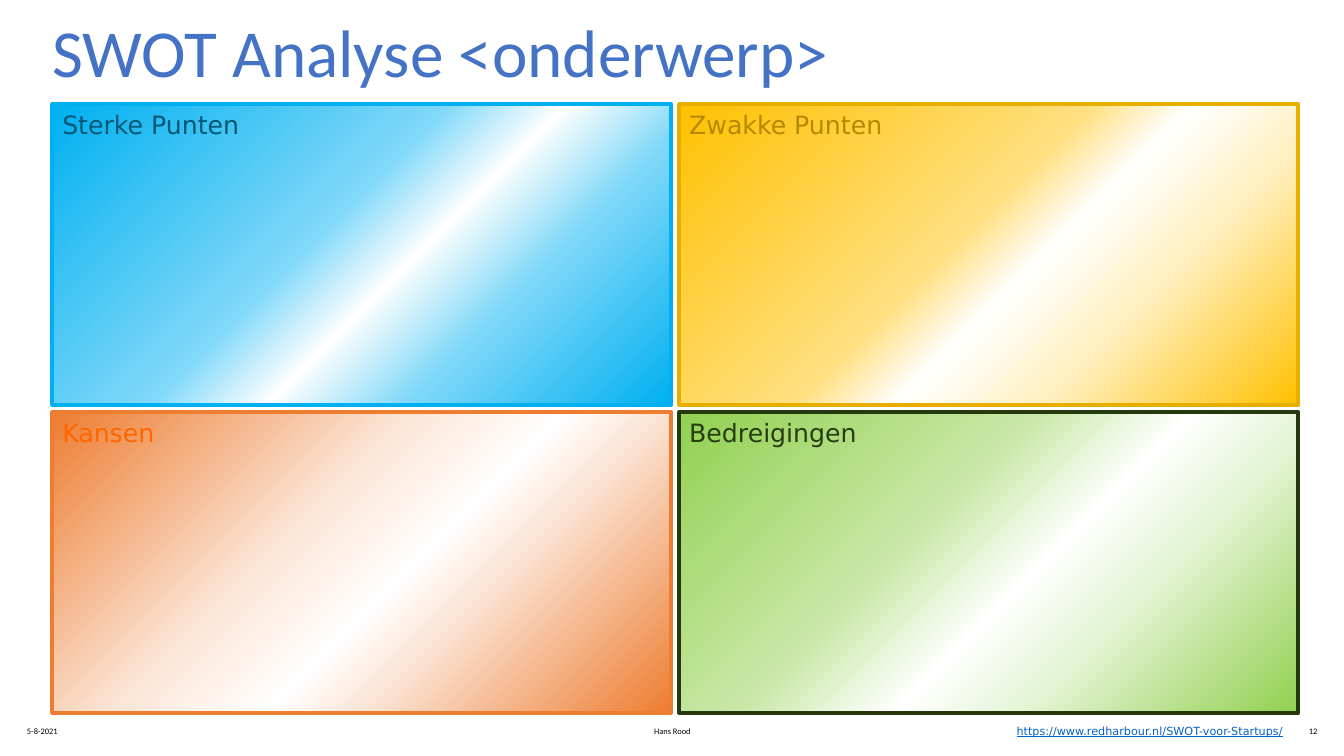
"""Build a SWOT analysis slide with four gradient quadrants."""
from dataclasses import dataclass

from lxml.etree import SubElement
from pptx import Presentation
from pptx.dml.color import RGBColor
from pptx.enum.shapes import MSO_SHAPE
from pptx.enum.text import MSO_ANCHOR, PP_ALIGN
from pptx.oxml.ns import qn
from pptx.util import Cm, Pt


@dataclass(frozen=True)
class Theme:
    heading_font: str = "Calibri"
    body_font: str = "DejaVu Sans"
    title_size: int = 48
    quadrant_size: int = 18
    link_size: int = 8
    footer_size: int = 6
    border_width: int = 3
    title: str = "4472C4"
    footer: str = "000000"
    link: str = "0563C1"
    strengths: tuple = ("00B0F0", "80D8F8", "FFFFFF", "80D8F8", "00B0F0")
    weaknesses: tuple = ("FFC000", "FFE080", "FFFFFF", "FFF0C0", "FFC000")
    opportunities: tuple = ("ED7D31", "FBE5D6", "FFFFFF", "FBE5D6", "ED7D31")
    threats: tuple = ("92D050", "C9E8A8", "FFFFFF", "E4F4D4", "92D050")
    strengths_border: str = "00B0F0"
    weaknesses_border: str = "E6AF00"
    opportunities_border: str = "ED7D31"
    threats_border: str = "25390F"
    strengths_text: str = "005776"
    weaknesses_text: str = "B48900"
    opportunities_text: str = "FF6600"
    threats_text: str = "273C10"


theme = Theme()


def write_text(shape, text, *, font, size, color, align=PP_ALIGN.LEFT,
               anchor=MSO_ANCHOR.TOP, underline=None):
    frame = shape.text_frame
    frame.word_wrap = True
    frame.vertical_anchor = anchor
    paragraph = frame.paragraphs[0]
    paragraph.alignment = align
    run = paragraph.add_run()
    run.text = text
    run.font.name = font
    run.font.size = Pt(size)
    run.font.color.rgb = RGBColor.from_string(color)
    run.font.underline = underline


presentation = Presentation()
presentation.slide_width = Cm(33.87)
presentation.slide_height = Cm(19.05)
slide = presentation.slides.add_slide(presentation.slide_layouts[6])

footers = [
    ("5-8-2021", 0.43, 7.62, PP_ALIGN.LEFT),
    ("Hans Rood", 11.23, 11.43, PP_ALIGN.CENTER),
    ("12", 25.83, 7.62, PP_ALIGN.RIGHT),
]
for text, left, width, align in footers:
    footer = slide.shapes.add_textbox(Cm(left), Cm(17.91), Cm(width), Cm(1.02))
    write_text(footer, text, font=theme.heading_font, size=theme.footer_size,
               color=theme.footer, align=align, anchor=MSO_ANCHOR.MIDDLE)

title = slide.shapes.add_textbox(Cm(1.07), Cm(0.13), Cm(24.46), Cm(2.31))
write_text(title, "SWOT Analyse <onderwerp>", font=theme.heading_font,
           size=theme.title_size, color=theme.title)

quadrants = [
    ("Sterke Punten", theme.strengths, (0, 43, 56, 71, 100),
     theme.strengths_border, theme.strengths_text),
    ("Zwakke Punten", theme.weaknesses, (0, 45, 56, 72, 100),
     theme.weaknesses_border, theme.weaknesses_text),
    ("Kansen", theme.opportunities, (0, 39, 56, 66, 100),
     theme.opportunities_border, theme.opportunities_text),
    ("Bedreigingen", theme.threats, (0, 39, 56, 70, 100),
     theme.threats_border, theme.threats_text),
]
for index, (name, colors, positions, border, text_color) in enumerate(quadrants):
    row, column = divmod(index, 2)
    quadrant = slide.shapes.add_shape(
        MSO_SHAPE.RECTANGLE, Cm(1.32 + 15.8 * column), Cm(2.63 + 7.76 * row),
        Cm(15.6), Cm(7.57))
    quadrant.shadow.inherit = False
    quadrant.line.color.rgb = RGBColor.from_string(border)
    quadrant.line.width = Pt(theme.border_width)
    quadrant.fill.gradient()
    quadrant.fill.gradient_angle = 315
    stops = quadrant._element.spPr.find(qn("a:gradFill")).find(qn("a:gsLst"))
    stops.clear()
    for position, color in zip(positions, colors):
        stop = SubElement(stops, qn("a:gs"), pos=str(position * 1000))
        SubElement(stop, qn("a:srgbClr"), val=color)
    write_text(quadrant, name, font=theme.body_font,
               size=theme.quadrant_size, color=text_color)

source = slide.shapes.add_textbox(Cm(25.37), Cm(18.14), Cm(7.7), Cm(0.61))
write_text(source, "https://www.redharbour.nl/SWOT-voor-Startups/",
           font=theme.body_font, size=theme.link_size, color=theme.link,
           underline=True)

presentation.save("out.pptx")
